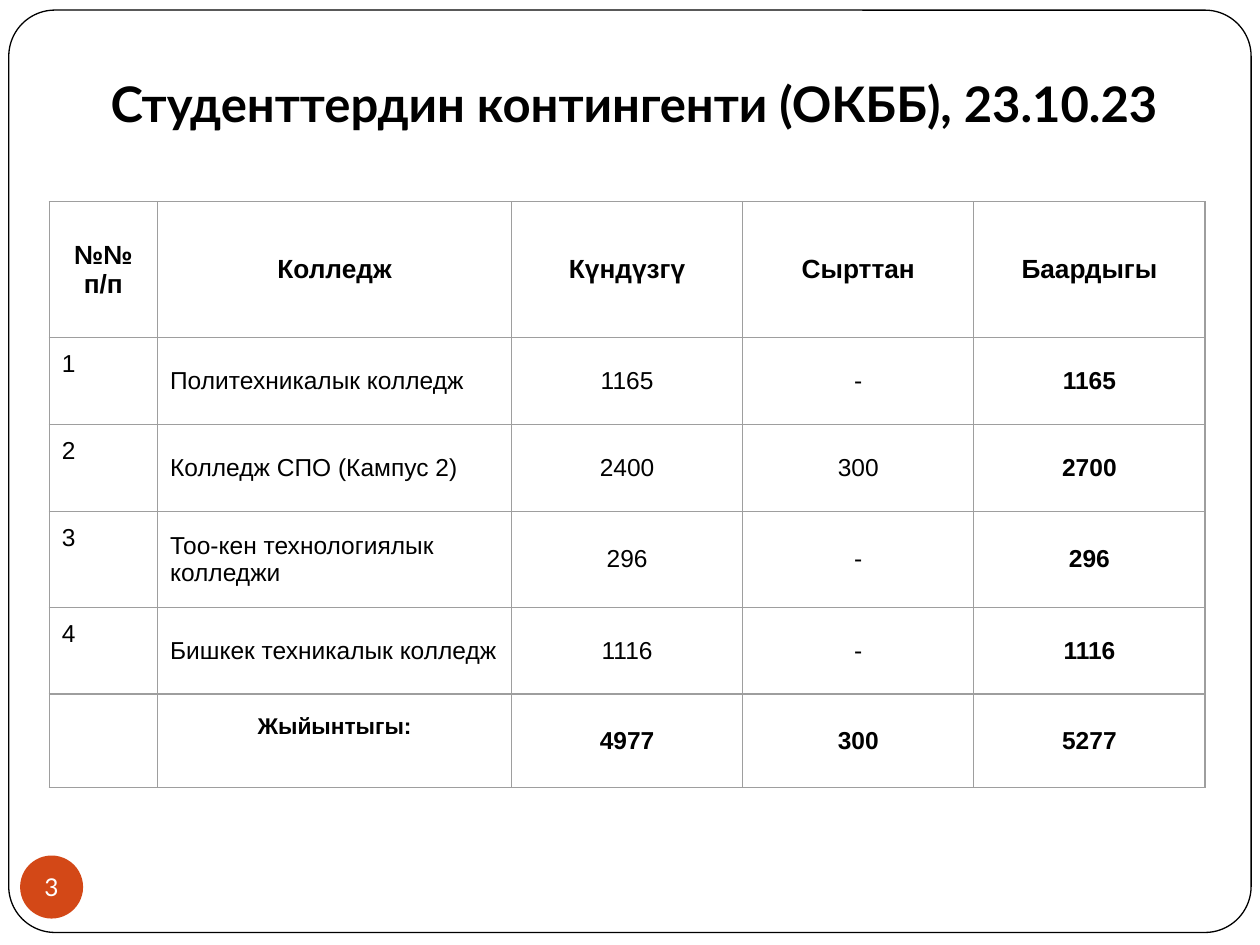
import pptx
import pptx.util
import pptx.dml.color
import pptx.enum.shapes
import pptx.enum.text
import pptx.oxml

Pt = pptx.util.Pt
Align = pptx.enum.text.PP_ALIGN
Anchor = pptx.enum.text.MSO_ANCHOR
Shape = pptx.enum.shapes.MSO_SHAPE

deck = pptx.Presentation()
deck.slide_width = pptx.util.Inches(10)
deck.slide_height = pptx.util.Inches(7.5)
col = deck.slide_width / 100
row = deck.slide_height / 100
pad = pptx.util.Inches(0.1)


def hue(code):
    return pptx.dml.color.RGBColor.from_string(code)


def write(para, text, size, face, code="000000", bold=False, align=Align.CENTER):
    para.text = text
    para.alignment = align
    para.font.size = Pt(size)
    para.font.name = face
    para.font.bold = bold
    para.font.color.rgb = hue(code)


slide = deck.slides.add_slide(deck.slide_layouts[5])
shapes = slide.shapes

frame = shapes.add_shape(Shape.ROUNDED_RECTANGLE, int(0.7 * col), int(1.07 * row),
                         int(98.6 * col), int(97.6 * row))
frame.adjustments[0] = 0.05
frame.shadow.inherit = False
frame.fill.solid()
frame.fill.fore_color.rgb = hue("FFFFFF")
frame.line.color.rgb = hue("000000")
frame.line.width = Pt(0.75)
shapes._spTree.insert(2, frame._element)

title = shapes.title
title.left, title.top = int(-2.1 * col), int(5.33 * row)
title.width, title.height = int(104.8 * col), int(10 * row)
title.text_frame.vertical_anchor = Anchor.BOTTOM
title.text_frame.margin_bottom = pad
write(title.text_frame.paragraphs[0], "Студенттердин контингенти (ОКББ), 23.10.23",
      28, "Lato", bold=True)

badge = shapes.add_shape(Shape.OVAL, int(1.6 * col), int(90.53 * row),
                         int(5 * col), int(6.67 * row))
badge.shadow.inherit = False
badge.fill.solid()
badge.fill.fore_color.rgb = hue("D34817")
badge.line.fill.background()
text = badge.text_frame
text.margin_left = text.margin_right = text.margin_top = text.margin_bottom = 0
text.vertical_anchor = Anchor.MIDDLE
write(text.paragraphs[0], "3", 14, "Lato", "FFFFFF")

data = [
    ["№№ п/п", "Колледж", "Күндүзгү", "Сырттан", "Баардыгы"],
    ["1", "Политехникалык колледж", "1165", "-", "1165"],
    ["2", "Колледж СПО (Кампус 2)", "2400", "300", "2700"],
    ["3", "Тоо-кен технологиялык колледжи", "296", "-", "296"],
    ["4", "Бишкек техникалык колледж", "1116", "-", "1116"],
    ["", "Жыйынтыгы:", "4977", "300", "5277"],
]
wide = [8.6, 28.1] + [18.35] * 3
tall = [14.4, 9.2, 9.2, 10.13, 9.2, 9.87]
last = len(data) - 1

table = shapes.add_table(len(tall), len(wide), int(3.9 * col), int(21.33 * row),
                         int(sum(wide) * col), int(sum(tall) * row)).table
table.first_row = table.horz_banding = False
for c, size in enumerate(wide):
    table.columns[c].width = int(size * col)
for r, size in enumerate(tall):
    table.rows[r].height = int(size * row)

edge = ('<a:{} xmlns:a="http://schemas.openxmlformats.org/drawingml/2006/main" w="9525">'
        '<a:solidFill><a:srgbClr val="9E9E9E"/></a:solidFill></a:{}>')
for r, line in enumerate(data):
    for c, word in enumerate(line):
        cell = table.cell(r, c)
        cell.margin_left = cell.margin_right = pad
        cell.margin_top = cell.margin_bottom = pad
        body = 0 < r < last
        cell.vertical_anchor = Anchor.TOP if body and c == 0 else Anchor.MIDDLE
        align = Align.LEFT if body and c < 2 else Align.CENTER
        size = 15 if r == 0 else 13 if (r, c) == (last, 1) else 14
        write(cell.text_frame.paragraphs[0], word, size, "Arial",
              bold=not body or c == 4, align=align)
        cell.fill.background()
        props = cell._tc.get_or_add_tcPr()
        for n, side in enumerate(["lnL", "lnR", "lnT", "lnB"]):
            props.insert(n, pptx.oxml.parse_xml(edge.format(side, side)))
table.cell(last, 1).margin_bottom = pptx.util.Inches(0.32)

deck.save("out.pptx")
